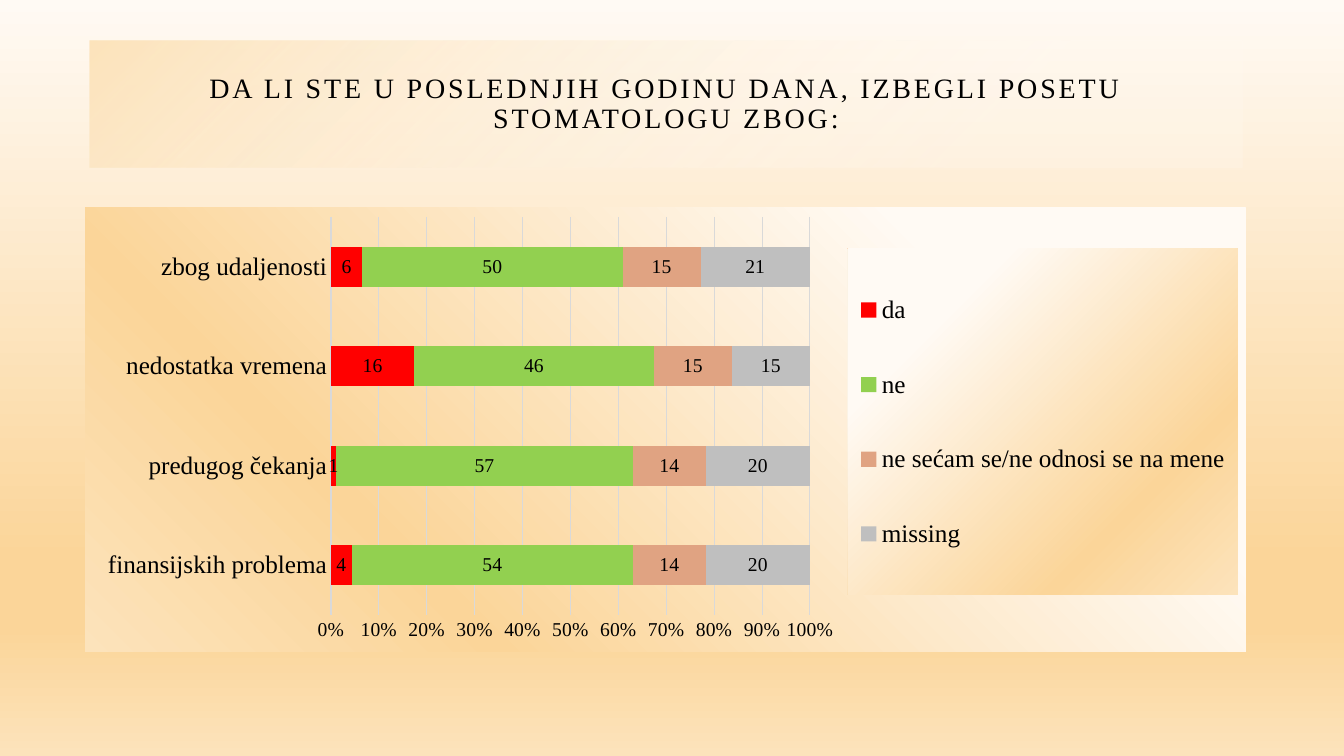
"""Build the slide on reasons for avoiding dental visits."""
from dataclasses import dataclass

from lxml import etree
from pptx import Presentation
from pptx import util as u
from pptx.chart import data
from pptx.dml import color
from pptx.enum import chart as kinds
from pptx.enum import text
from pptx.oxml import ns

PX = 914400 / 100.8
FONT = "Times New Roman"
COLORS = {
    "ink": "000000", "grid": "D9D9D9", "cream": "FFFAF4", "orange": "FBD599",
    "sand": "FCE3BB", "red": "FF0000", "green": "92D050", "clay": "E0A382",
    "gray": "BFBFBF",
}


@dataclass(frozen=True)
class Stop:
    position: int
    color: str
    alpha: int = 100


@dataclass(frozen=True)
class Answer:
    name: str
    values: tuple[int, ...]
    color: str


@dataclass(frozen=True)
class Area:
    left: int
    top: int
    width: int
    height: int

    def emu(self) -> tuple[int, ...]:
        return tuple(px(side) for side in (self.left, self.top, self.width, self.height))


PAGE = Area(0, 0, 1344, 756)
TITLE = Area(90, 41, 1152, 127)
CHART = Area(85, 208, 1161, 444)
PLOT = Area(331, 217, 479, 398)
LEGEND = Area(848, 249, 390, 346)
HEADING = "DA LI STE U POSLEDNJIH GODINU DANA, IZBEGLI POSETU STOMATOLOGU ZBOG:"
REASONS = ("finansijskih problema", "predugog čekanja", "nedostatka vremena", "zbog udaljenosti")
ANSWERS = (
    Answer("da", (4, 1, 16, 6), "red"),
    Answer("ne", (54, 57, 46, 50), "green"),
    Answer("ne sećam se/ne odnosi se na mene", (14, 14, 15, 15), "clay"),
    Answer("missing", (20, 20, 15, 21), "gray"),
)
PAGE_STOPS = (Stop(0, "cream"), Stop(74, "orange"), Stop(83, "orange"), Stop(100, "sand"))
TITLE_STOPS = (Stop(23, "cream", 23), Stop(100, "sand"))
CHART_STOPS = (Stop(22, "cream"), Stop(74, "orange"), Stop(100, "sand"))


def px(length: int) -> int:
    return round(length * PX)


def rgb(name: str) -> color.RGBColor:
    return color.RGBColor.from_string(COLORS[name])


def gradient(stops: tuple[Stop, ...], focus: str = "") -> etree._Element:
    fill = etree.Element(ns.qn("a:gradFill"), rotWithShape="1")
    stop_list = etree.SubElement(fill, ns.qn("a:gsLst"))
    for stop in stops:
        mark = etree.SubElement(stop_list, ns.qn("a:gs"), pos=str(stop.position * 1000))
        shade = etree.SubElement(mark, ns.qn("a:srgbClr"), val=COLORS[stop.color])
        if stop.alpha < 100:
            etree.SubElement(shade, ns.qn("a:alpha"), val=str(stop.alpha * 1000))
    if focus:
        route = etree.SubElement(fill, ns.qn("a:path"), path="circle")
        corner = {side: "100000" for side in focus}
        etree.SubElement(route, ns.qn("a:fillToRect"), corner)
    else:
        etree.SubElement(fill, ns.qn("a:lin"), ang="5400000", scaled="1")
    return fill


def chart_fill(stops: tuple[Stop, ...], focus: str) -> etree._Element:
    properties = etree.Element(ns.qn("c:spPr"))
    properties.append(gradient(stops, focus))
    line = etree.SubElement(properties, ns.qn("a:ln"))
    etree.SubElement(line, ns.qn("a:noFill"))
    return properties


def chart_layout(area: Area, inner: bool = False) -> etree._Element:
    layout = etree.Element(ns.qn("c:layout"))
    manual = etree.SubElement(layout, ns.qn("c:manualLayout"))
    settings = {"layoutTarget": "inner"} if inner else {}
    settings |= {
        "xMode": "edge", "yMode": "edge",
        "x": (area.left - CHART.left) / CHART.width,
        "y": (area.top - CHART.top) / CHART.height,
        "w": area.width / CHART.width,
        "h": area.height / CHART.height,
    }
    for tag, value in settings.items():
        etree.SubElement(manual, ns.qn(f"c:{tag}"), val=str(value))
    return layout


def style(font, size: int) -> None:
    font.name = FONT
    font.size = u.Pt(size)
    font.bold = False
    font.color.rgb = rgb("ink")


def add_text(page, area: Area, words: str, *, size: int, spacing: int, inset: int):
    box = page.shapes.add_textbox(*area.emu())
    frame = box.text_frame
    frame.word_wrap = True
    frame.vertical_anchor = text.MSO_ANCHOR.MIDDLE
    frame.margin_left = frame.margin_right = px(inset)
    frame.margin_top = frame.margin_bottom = px(inset)
    para = frame.paragraphs[0]
    para.alignment = text.PP_ALIGN.CENTER
    para.line_spacing = 0.9
    span = para.add_run()
    span.text = words
    style(span.font, size)
    span.font._element.set("spc", str(spacing * 100))
    return box


def add_answers(page) -> None:
    table = data.CategoryChartData()
    table.categories = REASONS
    for answer in ANSWERS:
        table.add_series(answer.name, answer.values)
    chart = page.shapes.add_chart(
        kinds.XL_CHART_TYPE.BAR_STACKED_100, *CHART.emu(), table).chart
    chart.has_title = False
    style(chart.font, 14)
    plot = chart.plots[0]
    plot.gap_width, plot.overlap = 150, 100
    plot.vary_by_categories = False
    for series, answer in zip(plot.series, ANSWERS):
        series.format.fill.solid()
        series.format.fill.fore_color.rgb = rgb(answer.color)
        labels = series.data_labels
        labels.show_value = True
        labels.position = kinds.XL_LABEL_POSITION.CENTER
        style(labels.font, 14)
    style_axes(chart)
    chart.has_legend = True
    legend = chart.legend
    legend.position = kinds.XL_LEGEND_POSITION.RIGHT
    legend.include_in_layout = False
    style(legend.font, 18)
    place_parts(chart)


def style_axes(chart) -> None:
    for axis, size in ((chart.category_axis, 18), (chart.value_axis, 14)):
        axis.major_tick_mark = axis.minor_tick_mark = kinds.XL_TICK_MARK.NONE
        style(axis.tick_labels.font, size)
    values = chart.value_axis
    values.has_major_gridlines = True
    values.major_unit = 0.1
    values.tick_labels.number_format = "0%"
    values.tick_labels.number_format_is_linked = False
    values.format.line.fill.background()
    for line in (chart.category_axis.format.line, values.major_gridlines.format.line):
        line.color.rgb = rgb("grid")
        line.width = u.Pt(0.75)


def place_parts(chart) -> None:
    root = chart.element
    plot_area = root.find(f".//{ns.qn('c:plotArea')}")
    legend = root.find(f".//{ns.qn('c:legend')}")
    for part in (plot_area, legend):
        for layout in part.findall(ns.qn("c:layout")):
            part.remove(layout)
    plot_area.insert(0, chart_layout(PLOT, inner=True))
    legend.find(ns.qn("c:legendPos")).addnext(chart_layout(LEGEND))
    legend.find(ns.qn("c:overlay")).addnext(chart_fill(CHART_STOPS, "rb"))
    root.find(ns.qn("c:chart")).addnext(chart_fill(CHART_STOPS, "lb"))


def main() -> None:
    deck = Presentation()
    deck.slide_width, deck.slide_height = px(PAGE.width), px(PAGE.height)
    page = deck.slides.add_slide(deck.slide_layouts[6])
    page.background.fill.solid()
    backdrop = page.element.find(f".//{ns.qn('p:bgPr')}")
    backdrop.replace(backdrop[0], gradient(PAGE_STOPS))
    title = add_text(page, TITLE, HEADING, size=20, spacing=2, inset=20)
    title.fill.background()
    properties = title.element.spPr
    properties.replace(properties.find(ns.qn("a:noFill")), gradient(TITLE_STOPS, "lt"))
    add_answers(page)
    deck.save("out.pptx")


if __name__ == "__main__":
    main()
